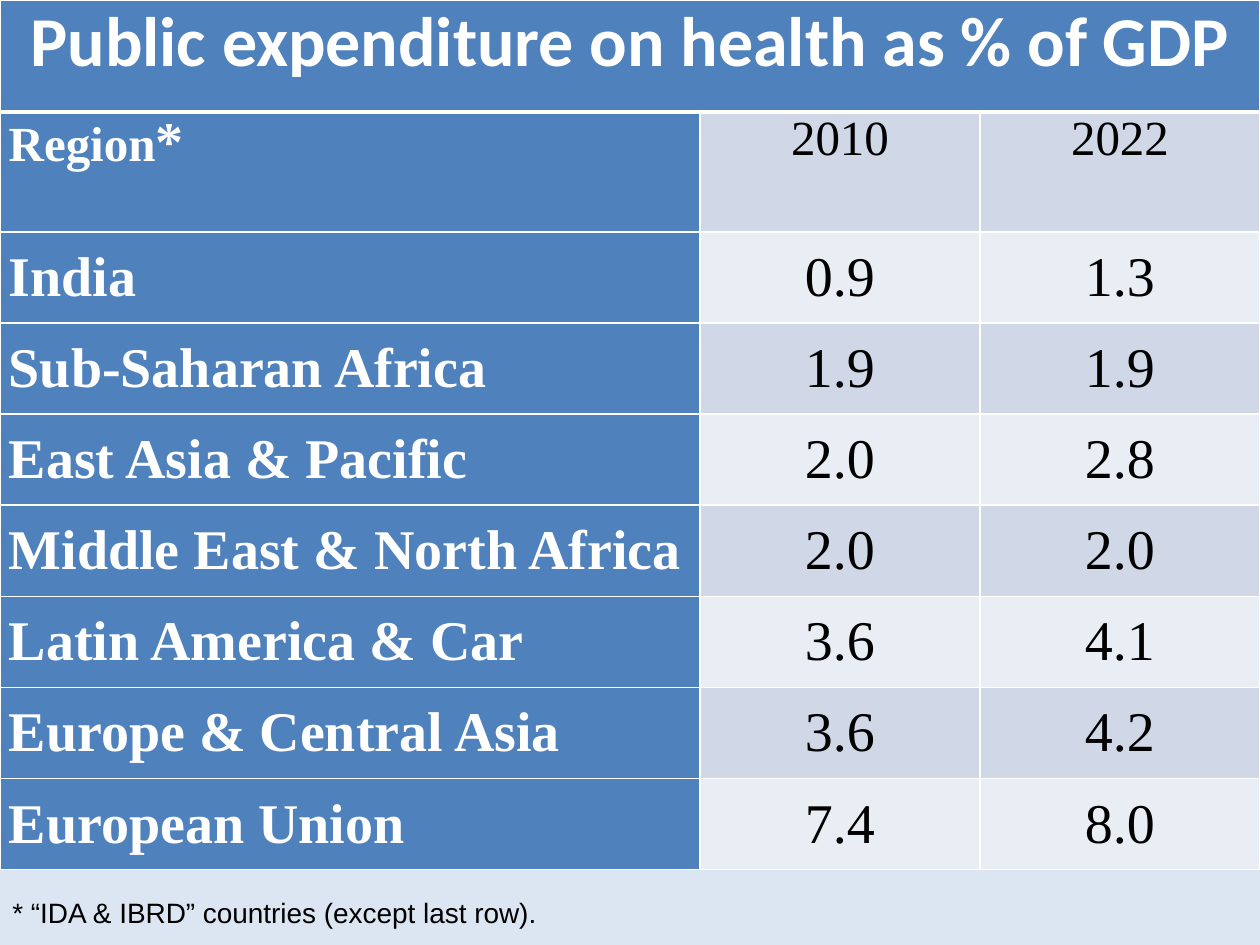
"""Build a slide with a table of public health expenditure by region."""
from pptx import Presentation
from pptx.dml.color import RGBColor
from pptx.enum.text import MSO_ANCHOR as Anchor, PP_ALIGN as Align
from pptx.oxml.ns import qn
from pptx.util import Pt
from lxml.etree import SubElement

TITLE = "Public expenditure on health as % of GDP"
YEARS = ("2010", "2022")
REGIONS = [
    ("India", "0.9", "1.3"),
    ("Sub-Saharan Africa", "1.9", "1.9"),
    ("East Asia & Pacific", "2.0", "2.8"),
    ("Middle East & North Africa", "2.0", "2.0"),
    ("Latin America & Car", "3.6", "4.1"),
    ("Europe & Central Asia", "3.6", "4.2"),
    ("European Union", "7.4", "8.0"),
]
FOOTNOTE = "* “IDA & IBRD” countries (except last row)."

BLUE, WHITE, BLACK = "4F81BD", "FFFFFF", "000000"
BANDS = ("D0D8E8", "E9EDF4")
BACKGROUND = "DCE6F2"
SERIF = "Times New Roman"
COLUMN_WIDTHS = (400, 160, 160)
ROW_HEIGHTS = [64, 68.5] + [52.1] * len(REGIONS)


def paint(fill, color):
    fill.solid()
    fill.fore_color.rgb = RGBColor.from_string(color)


def add_text(paragraph, text, size=32, font=SERIF, color=BLACK, bold=False, align=Align.LEFT):
    paragraph.alignment = align
    run = paragraph.add_run()
    run.text = text
    run.font.size = Pt(size)
    run.font.name = font
    run.font.bold = bold
    run.font.color.rgb = RGBColor.from_string(color)


def add_border(cell, side, width):
    line = SubElement(cell._tc.get_or_add_tcPr(), qn(f"a:{side}"), w=str(Pt(width)))
    fill = SubElement(line, qn("a:solidFill"))
    SubElement(fill, qn("a:srgbClr"), val=WHITE)


def style_cell(cell, color, anchor, top=1, bottom=1):
    cell.margin_left = cell.margin_right = Pt(5)
    cell.margin_top = cell.margin_bottom = Pt(0)
    cell.vertical_anchor = anchor
    for side, width in (("lnL", 1), ("lnR", 1), ("lnT", top), ("lnB", bottom)):
        add_border(cell, side, width)
    paint(cell.fill, color)


def fill_table(table):
    for column, width in zip(table.columns, COLUMN_WIDTHS):
        column.width = Pt(width)
    for row, height in zip(table.rows, ROW_HEIGHTS):
        row.height = Pt(height)

    title = table.cell(0, 0)
    title.merge(table.cell(0, 2))
    for cell in table.rows[0].cells:
        style_cell(cell, BLUE, Anchor.TOP, bottom=3)
    add_text(title.text_frame.paragraphs[0], TITLE, size=40, font="Calibri",
             color=WHITE, bold=True, align=Align.CENTER)

    for i, (region, *values) in enumerate([("Region", *YEARS)] + REGIONS):
        header = i == 0
        size = 28 if header else 32
        anchor = Anchor.TOP if header else Anchor.MIDDLE
        label, *value_cells = table.rows[i + 1].cells
        top = 3 if header else 1
        style_cell(label, BLUE, anchor, top=top)
        paragraph = label.text_frame.paragraphs[0]
        add_text(paragraph, region, size=size, color=WHITE, bold=True)
        if header:
            add_text(paragraph, "*", color=WHITE, bold=True)
        for cell, value in zip(value_cells, values):
            style_cell(cell, BANDS[i % 2], anchor, top=top)
            add_text(cell.text_frame.paragraphs[0], value, size=size, align=Align.CENTER)


def main():
    presentation = Presentation()
    presentation.slide_width, presentation.slide_height = Pt(720), Pt(540)
    slide = presentation.slides.add_slide(presentation.slide_layouts[6])
    paint(slide.background.fill, BACKGROUND)

    frame = slide.shapes.add_table(len(ROW_HEIGHTS), len(COLUMN_WIDTHS), Pt(0), Pt(0),
                                   Pt(sum(COLUMN_WIDTHS)), Pt(sum(ROW_HEIGHTS)))
    fill_table(frame.table)

    footnote = slide.shapes.add_textbox(Pt(0), Pt(508.3), Pt(720), Pt(26.6)).text_frame
    footnote.word_wrap = True
    add_text(footnote.paragraphs[0], FOOTNOTE, size=16, font="Arial")
    presentation.save("out.pptx")


if __name__ == "__main__":
    main()
